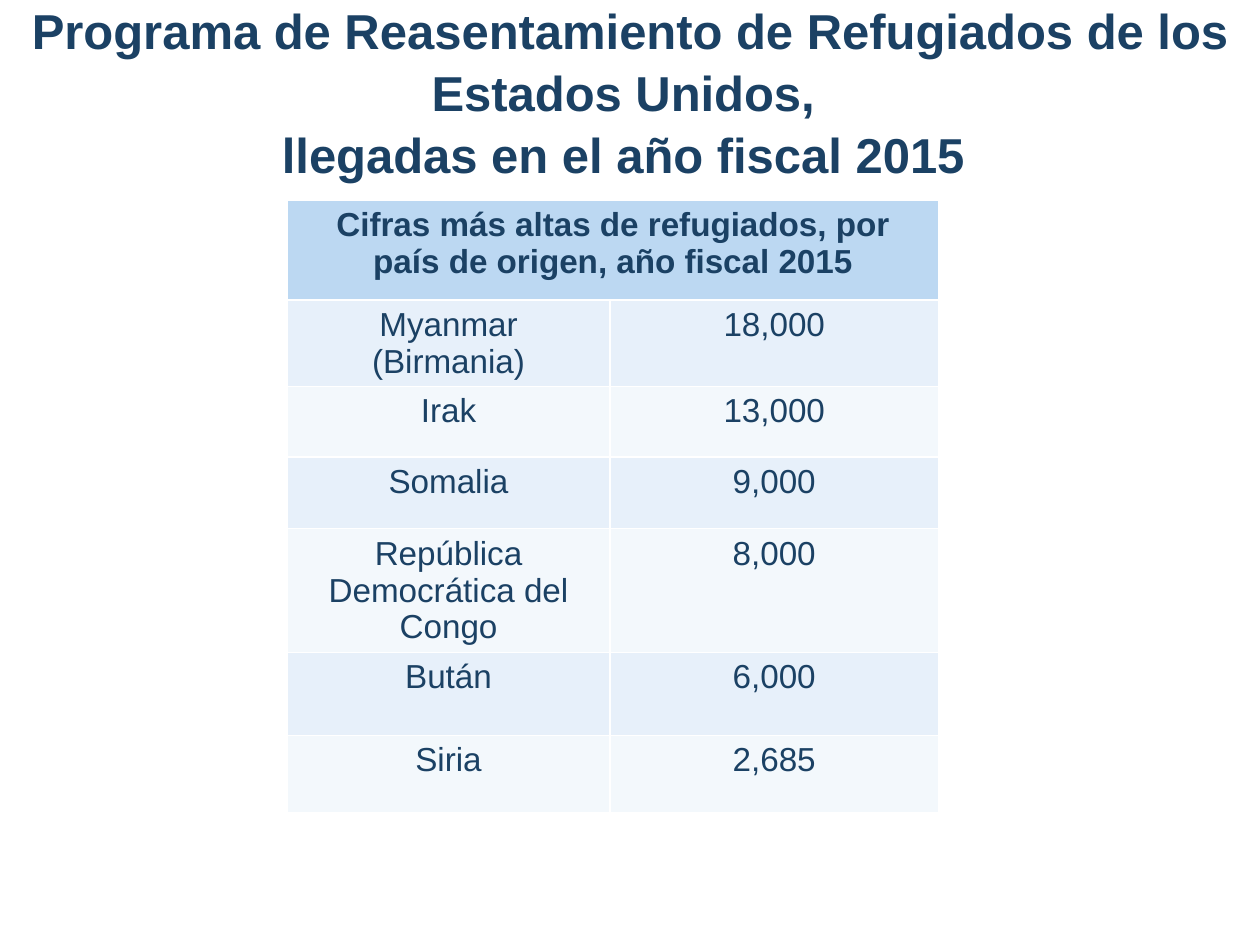
from dataclasses import dataclass

from lxml.etree import SubElement
from pptx import Presentation
from pptx.dml.color import RGBColor
from pptx.enum.text import MSO_ANCHOR, MSO_AUTO_SIZE, PP_ALIGN
from pptx.oxml.ns import qn
from pptx.util import Inches, Pt


@dataclass(frozen=True)
class Theme:
    """Colours, font and type sizes of the slide."""
    font: str = "Arial"
    text: str = "1B4164"
    header: str = "BCD8F2"
    bands: tuple = ("E7F0FA", "F3F8FC")
    border: str = "FFFFFF"
    border_width: int = 1
    title_size: int = 28
    table_size: int = 19


THEME = Theme()
TITLE_LINES = (
    "Programa de Reasentamiento de Refugiados de los Estados Unidos, ",
    "llegadas en el año fiscal 2015 ",
)
TABLE_HEADING = "Cifras más altas de refugiados, por país de origen, año fiscal 2015"
ARRIVALS = (
    ("Myanmar (Birmania)", "18,000"),
    ("Irak", "13,000"),
    ("Somalia", "9,000"),
    ("República Democrática del Congo", "8,000"),
    ("Bután", "6,000"),
    ("Siria", "2,685"),
)
COLUMN_WIDTHS = (2.56, 2.61)
ROW_HEIGHTS = (0.79, 0.59, 0.56, 0.57, 0.93, 0.66, 0.61)


def add_run(paragraph, text, size, bold):
    """Add a run in the theme font and colour."""
    run = paragraph.add_run()
    run.text = text
    run.font.name = THEME.font
    run.font.size = Pt(size)
    run.font.bold = bold
    run.font.color.rgb = RGBColor.from_string(THEME.text)


def place_title(slide, left, top, width, height):
    """Place the centred title in its box."""
    title = slide.shapes.title
    title.left, title.top = Inches(left), Inches(top)
    title.width, title.height = Inches(width), Inches(height)
    frame = title.text_frame
    frame.word_wrap = True
    frame.auto_size = MSO_AUTO_SIZE.NONE
    frame.vertical_anchor = MSO_ANCHOR.MIDDLE
    frame.margin_top, frame.margin_bottom = Inches(0), Inches(0.42)
    paragraph = frame.paragraphs[0]
    paragraph.alignment = PP_ALIGN.CENTER
    paragraph.line_spacing = 1.06
    for index, line in enumerate(TITLE_LINES):
        if index:
            paragraph.add_line_break()
        add_run(paragraph, line, THEME.title_size, True)


def format_cell(cell, fill):
    """Give a cell its borders and fill."""
    properties = cell._tc.get_or_add_tcPr()
    for side in ("a:lnL", "a:lnR", "a:lnT", "a:lnB"):
        line = SubElement(properties, qn(side), w=str(Pt(THEME.border_width)))
        solid = SubElement(line, qn("a:solidFill"))
        SubElement(solid, qn("a:srgbClr"), val=THEME.border)
    cell.fill.solid()
    cell.fill.fore_color.rgb = RGBColor.from_string(fill)


def write_cell(cell, text, bold=False):
    """Write centred text in a cell."""
    paragraph = cell.text_frame.paragraphs[0]
    paragraph.alignment = PP_ALIGN.CENTER
    add_run(paragraph, text, THEME.table_size, bold)


def place_arrivals_table(slide, left, top, width, height):
    """Place the table of arrivals by country in its box."""
    table = slide.shapes.add_table(
        len(ROW_HEIGHTS), len(COLUMN_WIDTHS),
        Inches(left), Inches(top), Inches(width), Inches(height),
    ).table
    for column, share in zip(table.columns, COLUMN_WIDTHS):
        column.width = Inches(width * share / sum(COLUMN_WIDTHS))
    for row, share in zip(table.rows, ROW_HEIGHTS):
        row.height = Inches(height * share / sum(ROW_HEIGHTS))
    for cell in table.rows[0].cells:
        format_cell(cell, THEME.header)
    table.cell(0, 0).merge(table.cell(0, 1))
    write_cell(table.cell(0, 0), TABLE_HEADING, True)
    for row_index, values in enumerate(ARRIVALS, 1):
        fill = THEME.bands[(row_index - 1) % len(THEME.bands)]
        for column_index, value in enumerate(values):
            cell = table.cell(row_index, column_index)
            format_cell(cell, fill)
            write_cell(cell, value)


def main():
    """Build and save the slide."""
    presentation = Presentation()
    presentation.slide_width = Inches(10)
    presentation.slide_height = Inches(7.5)
    slide = presentation.slides.add_slide(presentation.slide_layouts[5])
    place_title(slide, 0, 0.36, 10, 1.13)
    place_arrivals_table(slide, 2.28, 1.59, sum(COLUMN_WIDTHS), sum(ROW_HEIGHTS))
    presentation.save("out.pptx")


if __name__ == "__main__":
    main()
